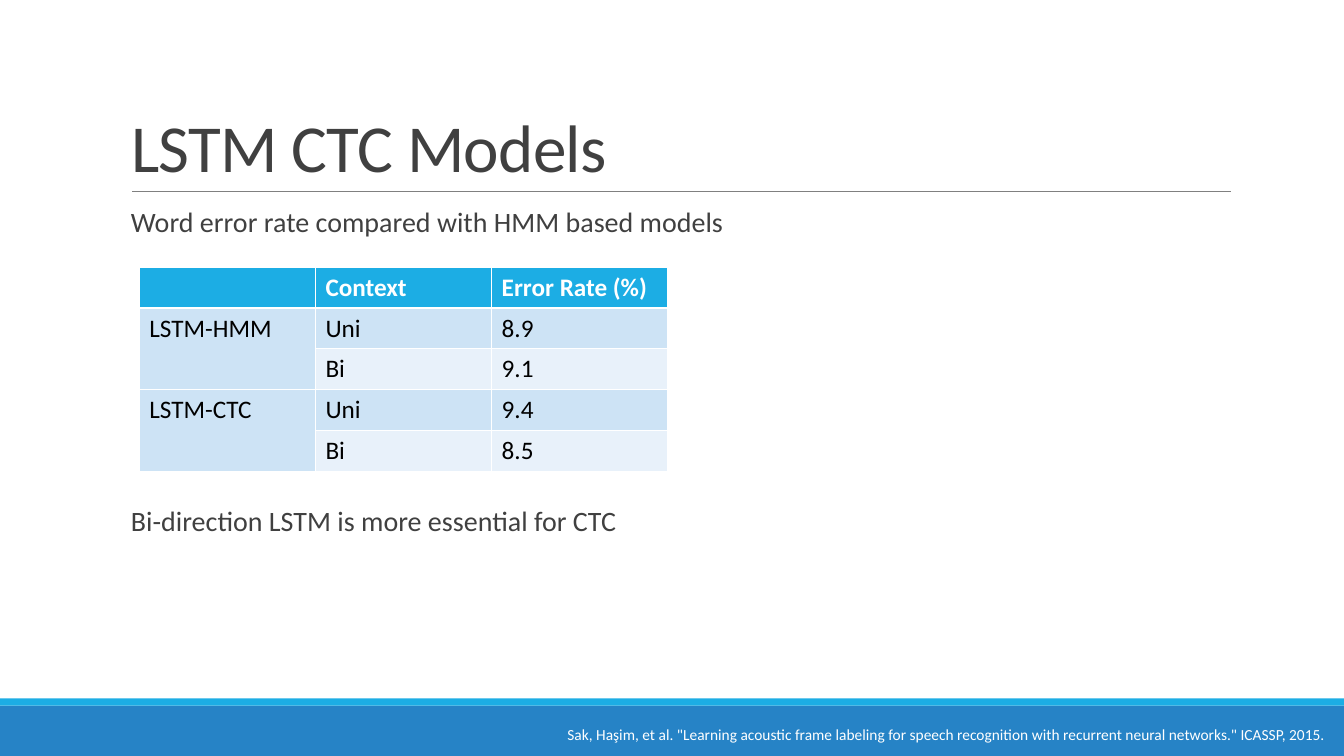
from lxml import etree
from pptx import Presentation
from pptx.dml.color import RGBColor
from pptx.enum.shapes import MSO_CONNECTOR, MSO_SHAPE
from pptx.enum.text import MSO_ANCHOR, MSO_AUTO_SIZE, PP_ALIGN
from pptx.oxml.ns import qn
from pptx.util import Cm, Pt

COLORS = {
    "text": "404040", "black": "000000", "white": "FFFFFF", "rule": "808080",
    "footer": "2683C6", "accent": "1CADE4", "band": "CDE3F5", "light": "E8F1FA",
}


def rgb(name):
    return RGBColor.from_string(COLORS[name])


def write(p, text, size=20, color="text", bold=False, line=None, before=None, after=None):
    p.alignment = PP_ALIGN.LEFT
    if line is not None:
        p.line_spacing = line
    if before is not None:
        p.space_before = Pt(before)
    if after is not None:
        p.space_after = Pt(after)
    r = p.add_run()
    r.text = text
    r.font.name = "Calibri"
    r.font.size = Pt(size)
    r.font.bold = bold
    r.font.color.rgb = rgb(color)
    return r


prs = Presentation()
prs.slide_width, prs.slide_height = Cm(33.87), Cm(19.05)
s = prs.slides.add_slide(prs.slide_layouts[1])

for top, height, color in [(17.78, 1.27, "footer"), (17.6, 0.18, "accent")]:
    bar = s.shapes.add_shape(MSO_SHAPE.RECTANGLE, 0, Cm(top), prs.slide_width, Cm(height))
    bar.shadow.inherit = False
    bar.fill.solid()
    bar.fill.fore_color.rgb = rgb(color)
    bar.line.fill.background()

rule = s.shapes.add_connector(MSO_CONNECTOR.STRAIGHT, Cm(3.33), Cm(4.83), Cm(31.01), Cm(4.83))
rule.line.color.rgb = rgb("rule")
rule.line.width = Pt(0.5)
etree.SubElement(rule._element.spPr, qn("a:effectLst"))

title = s.shapes.title
title.left, title.top, title.width, title.height = Cm(3.05), Cm(0.79), Cm(27.94), Cm(4.04)
tf = title.text_frame
tf.auto_size = MSO_AUTO_SIZE.NONE
tf.vertical_anchor = MSO_ANCHOR.BOTTOM
r = write(tf.paragraphs[0], "LSTM CTC Models", size=48, line=0.85)
r.font._element.set("spc", "-50")

body = s.placeholders[1]
body.left, body.top, body.width, body.height = Cm(3.05), Cm(5.13), Cm(27.94), Cm(11.18)
tf = body.text_frame
tf.auto_size = MSO_AUTO_SIZE.NONE
tf.margin_left = tf.margin_right = 0
points = [("Word error rate compared with HMM based models", 12),
          ("Bi-direction LSTM is more essential for CTC", 190)]
for i, (text, before) in enumerate(points):
    p = tf.add_paragraph() if i else tf.paragraphs[0]
    write(p, text, line=0.9, before=before, after=2)
    pPr = p._p.get_or_add_pPr()
    pPr.set("marL", str(Cm(0.25)))
    pPr.set("indent", str(-Cm(0.25)))
    bullet_color = etree.SubElement(pPr, qn("a:buClr"))
    etree.SubElement(bullet_color, qn("a:srgbClr"), val=COLORS["accent"])
    etree.SubElement(pPr, qn("a:buChar"), char=" ")

rows = [
    ["", "Context", "Error Rate (%)"],
    ["LSTM-HMM", "Uni", "8.9"],
    ["", "Bi", "9.1"],
    ["LSTM-CTC", "Uni", "9.4"],
    ["", "Bi", "8.5"],
]
table = s.shapes.add_table(5, 3, Cm(3.51), Cm(6.73), Cm(13.32), Cm(5.15)).table
for col in table.columns:
    col.width = Cm(4.44)
for i, row in enumerate(rows):
    table.rows[i].height = Cm(1.03)
    fill = "accent" if i == 0 else "band" if i % 2 else "light"
    for j, text in enumerate(row):
        cell = table.cell(i, j)
        cell.fill.solid()
        cell.fill.fore_color.rgb = rgb(fill)
        if text:
            write(cell.text_frame.paragraphs[0], text, size=18,
                  color="black" if i else "white", bold=i == 0)
for i in (1, 3):
    table.cell(i, 0).merge(table.cell(i + 1, 0))

citation = s.shapes.add_textbox(Cm(14.05), Cm(18.16), Cm(19.81), Cm(0.74))
tf = citation.text_frame
tf.word_wrap = False
tf.auto_size = MSO_AUTO_SIZE.SHAPE_TO_FIT_TEXT
write(tf.paragraphs[0],
      'Sak, Haşim, et al. "Learning acoustic frame labeling for speech recognition '
      'with recurrent neural networks." ICASSP, 2015.', size=11, color="white")

prs.save("out.pptx")
